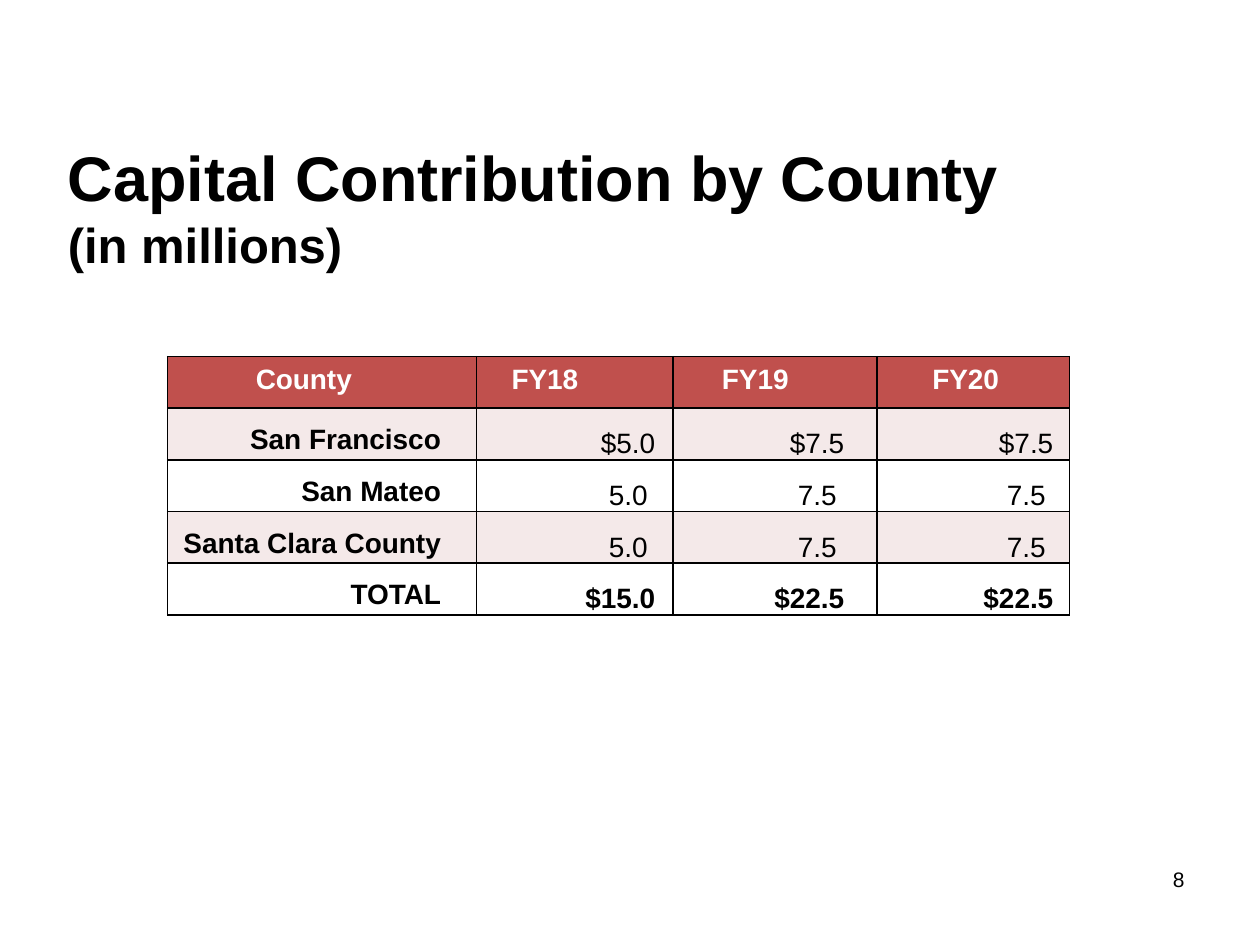
from lxml.etree import SubElement
from pptx import Presentation
from pptx.dml.color import RGBColor
from pptx.enum.text import MSO_ANCHOR, PP_ALIGN
from pptx.oxml.ns import qn
from pptx.util import Inches, Pt


def colour(hex_string):
    return RGBColor.from_string(hex_string)


class SlideBuilder:
    font_name = "Arial"
    black = "000000"
    white = "FFFFFF"
    header_fill = "C0504D"
    band_fill = "F4E9E9"

    def __init__(self, deck):
        self.slide = deck.slides.add_slide(deck.slide_layouts[6])

    def format_span(self, span, size, bold=False, color=black):
        span.font.name = self.font_name
        span.font.size = Pt(size)
        span.font.bold = bold
        span.font.color.rgb = colour(color)

    def text(self, left, top, width, height, content, sizes, bold=False,
             align=PP_ALIGN.LEFT, anchor=MSO_ANCHOR.TOP):
        box = self.slide.shapes.add_textbox(
            Inches(left), Inches(top), Inches(width), Inches(height))
        frame = box.text_frame
        frame.word_wrap = True
        frame.vertical_anchor = anchor
        frame.text = content
        for para, size in zip(frame.paragraphs, sizes):
            para.alignment = align
            for span in para.runs:
                self.format_span(span, size, bold)

    def table(self, left, top, column_widths, row_height, row_count):
        frame = self.slide.shapes.add_table(
            row_count, len(column_widths), Inches(left), Inches(top),
            Inches(sum(column_widths)), Inches(row_height * row_count))
        table = frame.table
        for column, width in zip(table.columns, column_widths):
            column.width = Inches(width)
        for row in table.rows:
            row.height = Inches(row_height)
        return table

    def cell(self, cell, content, fill=None, bold=False, color=black,
             align=PP_ALIGN.RIGHT, anchor=MSO_ANCHOR.TOP,
             left=0, top=0, right=0):
        cell.margin_left = Inches(left)
        cell.margin_top = Inches(top)
        cell.margin_right = Inches(right)
        cell.margin_bottom = 0
        cell.vertical_anchor = anchor
        cell.text_frame.text = content
        para = cell.text_frame.paragraphs[0]
        para.alignment = align
        self.format_span(para.runs[0], 16, bold, color)
        self.borders(cell)
        if fill:
            cell.fill.solid()
            cell.fill.fore_color.rgb = colour(fill)
        else:
            cell.fill.background()

    def borders(self, cell):
        properties = cell._tc.get_or_add_tcPr()
        for side in ("a:lnL", "a:lnR", "a:lnT", "a:lnB"):
            line = SubElement(properties, qn(side), w=str(Pt(1)))
            solid = SubElement(line, qn("a:solidFill"))
            SubElement(solid, qn("a:srgbClr"), val=self.black)


def main():
    deck = Presentation()
    deck.slide_width, deck.slide_height = Inches(10), Inches(7.5)
    builder = SlideBuilder(deck)

    # Title
    builder.text(0.44, 1.26, 9.58, 0.75,
                 "Capital Contribution by County\n(in millions)", (36, 28),
                 bold=True, anchor=MSO_ANCHOR.MIDDLE)

    # Contribution table
    headers = ["County", "FY18", "FY19", "FY20"]
    header_indents = [0.7, 0.28, 0.39, 0.44]
    contributions = [
        ["San Francisco", "$5.0", "$7.5", "$7.5"],
        ["San Mateo", "5.0", "7.5", "7.5"],
        ["Santa Clara County", "5.0", "7.5", "7.5"],
        ["TOTAL", "$15.0", "$22.5", "$22.5"],
    ]
    value_margins = [0.14, 0.26, 0.13]
    table = builder.table(1.33, 2.83, [2.45, 1.56, 1.62, 1.53], 0.41,
                          len(contributions) + 1)

    for column, (header, indent) in enumerate(zip(headers, header_indents)):
        builder.cell(table.cell(0, column), header, builder.header_fill,
                     bold=True, color=builder.white, align=PP_ALIGN.LEFT,
                     left=indent, top=0.06)

    for row, (county, *amounts) in enumerate(contributions, start=1):
        fill = builder.band_fill if row % 2 else None
        builder.cell(table.cell(row, 0), county, fill, bold=True,
                     top=0.13, right=0.28)
        for column, (amount, margin) in enumerate(zip(amounts, value_margins), start=1):
            # Amounts without a dollar sign sit slightly further in
            inset = 0 if amount.startswith("$") else 0.06
            builder.cell(table.cell(row, column), amount, fill,
                         bold=county == "TOTAL", anchor=MSO_ANCHOR.BOTTOM,
                         right=margin + inset)

    # Page number
    builder.text(7.17, 6.83, 2.33, 0.52, "8", (12,), align=PP_ALIGN.RIGHT)

    deck.save("out.pptx")


if __name__ == "__main__":
    main()
